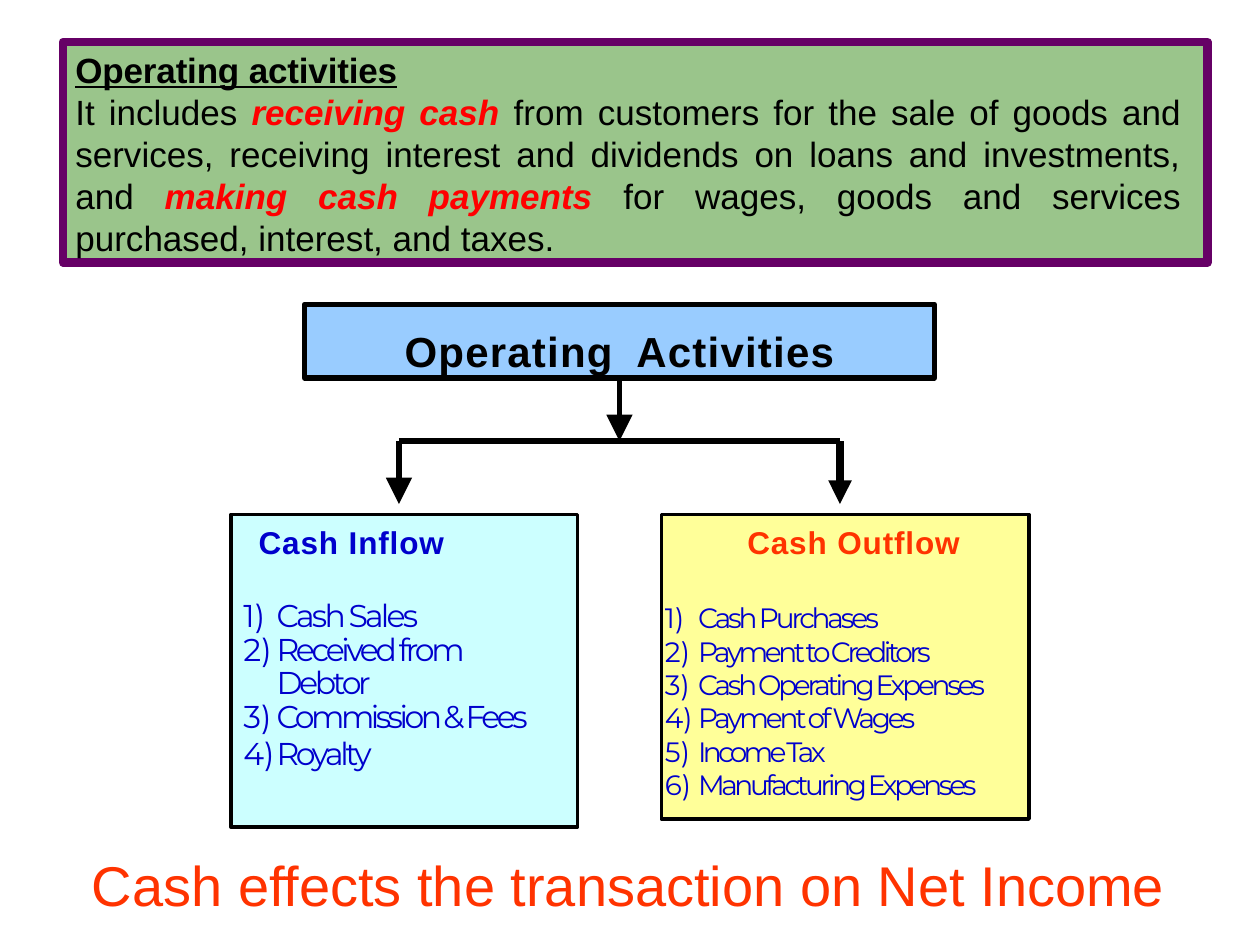
import pptx
import pptx.dml.color
import pptx.enum.dml
import pptx.enum.shapes
import pptx.enum.text
import pptx.oxml.ns
import pptx.util
from lxml import etree

Pt = pptx.util.Pt
ALIGN = pptx.enum.text.PP_ALIGN


def rgb(value):
    """Turn a hex string into a colour."""
    return pptx.dml.color.RGBColor.from_string(value)


def add_element(parent, tag, **attrs):
    """Append a DrawingML element to its parent."""
    return etree.SubElement(parent, pptx.oxml.ns.qn(tag), attrs)


def place(sp, box):
    """Move a shape to a box of left, top, width and height in points."""
    sp.left, sp.top, sp.width, sp.height = (Pt(v) for v in box)


def paint(sp, fill, line, width):
    """Give a shape a solid fill and outline."""
    sp.fill.solid()
    sp.fill.fore_color.rgb = rgb(fill)
    sp.line.color.rgb = rgb(line)
    sp.line.width = Pt(width)


def add_box(slide, box, fill, line, width):
    """Add a plain rectangle."""
    sp = slide.shapes.add_shape(
        pptx.enum.shapes.MSO_SHAPE.RECTANGLE, *(Pt(v) for v in box))
    sp.shadow.inherit = False
    paint(sp, fill, line, width)
    return sp


def set_frame(sp, left=0, top=0, right=0):
    """Prepare a top-anchored text frame with the given insets."""
    tf = sp.text_frame
    tf.word_wrap = True
    tf.auto_size = pptx.enum.text.MSO_AUTO_SIZE.NONE
    tf.vertical_anchor = pptx.enum.text.MSO_ANCHOR.TOP
    tf.margin_left, tf.margin_top = Pt(left), Pt(top)
    tf.margin_right, tf.margin_bottom = Pt(right), Pt(0)
    return tf


def style(p, size, color, bold=False, name="Arial", align=ALIGN.LEFT):
    """Set the font and alignment of a paragraph."""
    p.alignment = align
    p.font.size = Pt(size)
    p.font.name = name
    p.font.bold = bold
    p.font.color.rgb = rgb(color)


def add_run(p, text, spacing=0):
    """Add a run with letter spacing in points."""
    r = p.add_run()
    r.text = text
    if spacing:
        r._r.get_or_add_rPr().set("spc", str(round(spacing * 100)))
    return r


def add_definition(slide, box):
    """Add the framed definition at the top."""
    sp = add_box(slide, box, "9AC58B", "660066", 5)
    tf = set_frame(sp, left=7.2, top=3.6, right=15)
    p = tf.paragraphs[0]
    style(p, 20, "000000", bold=True)
    p.font.underline = True
    p.line_spacing = Pt(24)
    add_run(p, "Operating activities", -0.1)
    p = tf.add_paragraph()
    style(p, 20, "000000", align=ALIGN.JUSTIFY)
    p.line_spacing = Pt(24)
    for text, strong in (
        ("It includes ", False),
        ("receiving cash ", True),
        ("from customers for the sale of goods and services, receiving "
         "interest and dividends on loans and investments, and ", False),
        ("making cash payments ", True),
        ("for wages, goods and services purchased, interest, and taxes.", False),
    ):
        r = add_run(p, text)
        if strong:
            r.font.bold = r.font.italic = True
            r.font.color.rgb = rgb("FF0000")


def add_banner(slide, box):
    """Add the box at the head of the tree."""
    sp = add_box(slide, box, "99CCFF", "000000", 3)
    p = set_frame(sp, top=12.2).paragraphs[0]
    tabs = add_element(p._p.get_or_add_pPr(), "a:tabLst")
    add_element(tabs, "a:tab", pos=str(Pt(132.5)), algn="l")
    style(p, 24, "000000", bold=True, align=ALIGN.CENTER)
    add_run(p, "Operating\tActivities", 0.7)
    return sp


def add_line(slide, x1, y1, x2, y2, width=3, head=None):
    """Add a black line, with an arrowhead of the given size if any."""
    cxn = slide.shapes.add_connector(
        pptx.enum.shapes.MSO_CONNECTOR.STRAIGHT, Pt(x1), Pt(y1), Pt(x2), Pt(y2))
    cxn.line.color.rgb = rgb("000000")
    cxn.line.width = Pt(width)
    if head:
        add_element(cxn.line._get_or_add_ln(), "a:tailEnd",
                    type="triangle", w=head, len=head)
    add_element(cxn._element.spPr, "a:effectLst")
    return cxn


def add_branches(slide, banner, box):
    """Add the fork from the banner down to the two panels."""
    left, top, width, height = box
    right, middle = left + width, left + width / 2
    fork, bottom = top + height / 2, top + height
    stem = add_line(slide, middle, top, middle, fork, head="lg")
    stem.begin_connect(banner, 2)
    add_line(slide, left, fork, right, fork)
    add_line(slide, left, fork, left, bottom, head="lg")
    add_line(slide, right, fork, right, bottom, width=4.5, head="med")


def fill_panel(sp, box, fill, heading, color, heading_indent, items, size,
               indent, last_gap=0):
    """Turn a body placeholder into a panel with a heading and numbered list."""
    place(sp, box)
    paint(sp, fill, "000000", 2.25)
    tf = set_frame(sp, top=5, right=12)
    p = tf.paragraphs[0]
    pPr = p._p.get_or_add_pPr()
    pPr.set("marL", str(Pt(heading_indent)))
    pPr.set("indent", "0")
    p.space_before = Pt(0)
    add_element(pPr, "a:buNone")
    style(p, 18, color, bold=True)
    add_run(p, heading, 0.5)
    gaps = [22.7] + [0] * (len(items) - 2) + [last_gap]
    for (text, spacing), gap in zip(items, gaps):
        p = tf.add_paragraph()
        pPr = p._p.get_or_add_pPr()
        pPr.set("marL", str(Pt(indent)))
        pPr.set("indent", str(-Pt(18.9)))
        p.line_spacing = Pt(19.1)
        p.space_before = Pt(gap)
        add_element(pPr, "a:buFont", typeface="+mj-lt")
        add_element(pPr, "a:buAutoNum", type="arabicParenR")
        style(p, size, "0000CC", name="Montserrat")
        add_run(p, text, spacing)


def fill_title(sp, box):
    """Place the closing statement in the title placeholder."""
    place(sp, box)
    p = set_frame(sp).paragraphs[0]
    style(p, 32, "FF3300")
    add_run(p, "Cash effects the transaction on Net Income")


def main():
    """Build the slide and save it."""
    prs = pptx.Presentation()
    prs.slide_width, prs.slide_height = Pt(720), Pt(540)
    slide = prs.slides.add_slide(prs.slide_layouts[3])
    title, inflow, outflow = slide.placeholders
    add_definition(slide, (36, 24, 654, 126))
    banner = add_banner(slide, (174, 174, 360, 42))
    add_branches(slide, banner, (228, 216, 252, 72))
    fill_panel(inflow, (132, 294, 198, 178.5), "CCFFFF", "Cash Inflow",
               "0000CC", 15.8, [
                   ("Cash Sales", -1.6),
                   ("Received from Debtor", -1.9),
                   ("Commission & Fees", -2),
                   ("Royalty", -1.9),
               ], 18, 26, last_gap=2.1)
    fill_panel(outflow, (378, 294, 210, 174), "FFFF99", "Cash Outflow",
               "FF3300", 49, [
                   ("Cash Purchases", -1.75),
                   ("Payment to Creditors", -1.95),
                   ("Cash Operating Expenses", -1.85),
                   ("Payment of Wages", -1.8),
                   ("Income Tax", -2.1),
                   ("Manufacturing Expenses", -1.9),
               ], 16, 20.9)
    fill_title(title, (52.5, 486, 630, 40))
    prs.save("out.pptx")


if __name__ == "__main__":
    main()
